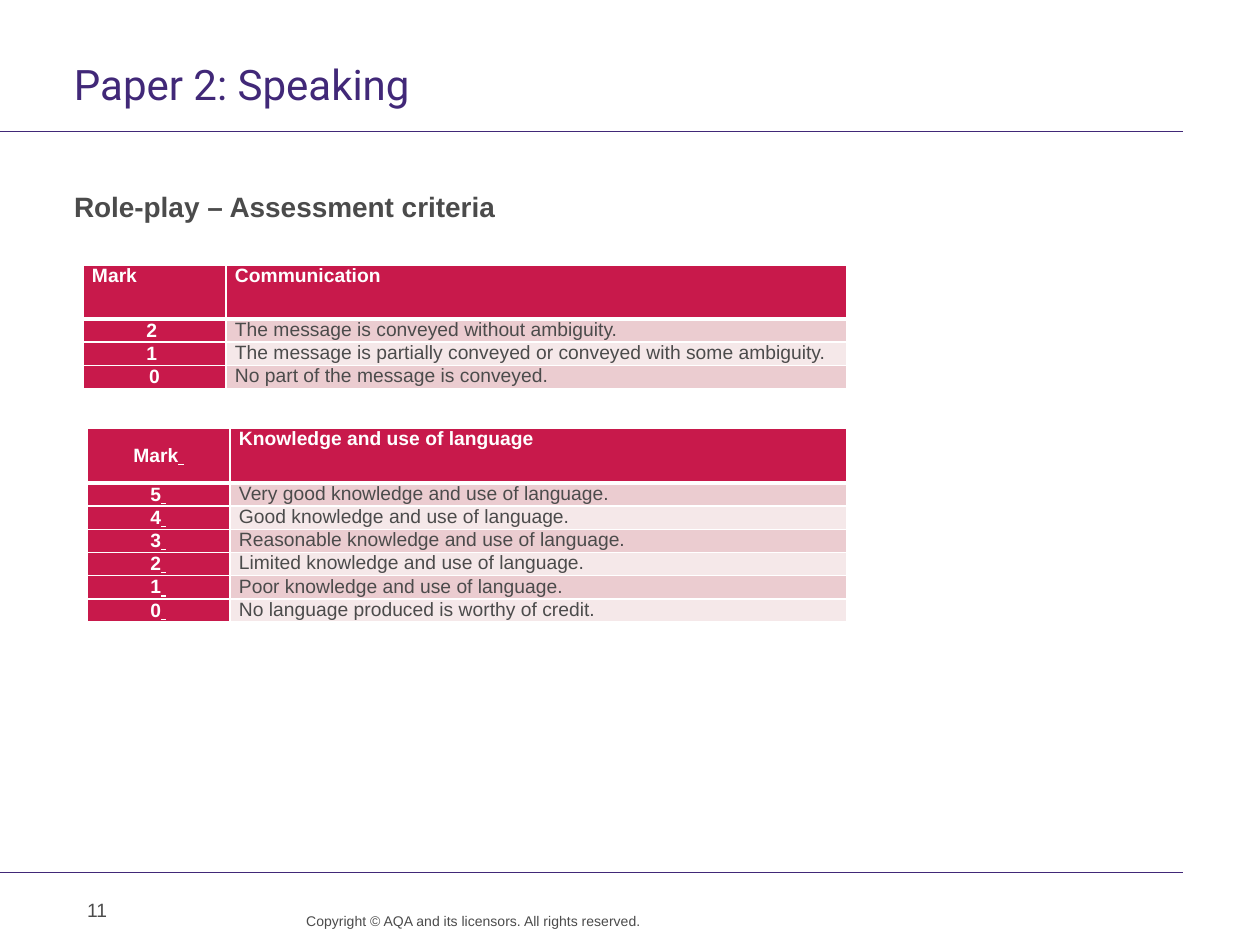
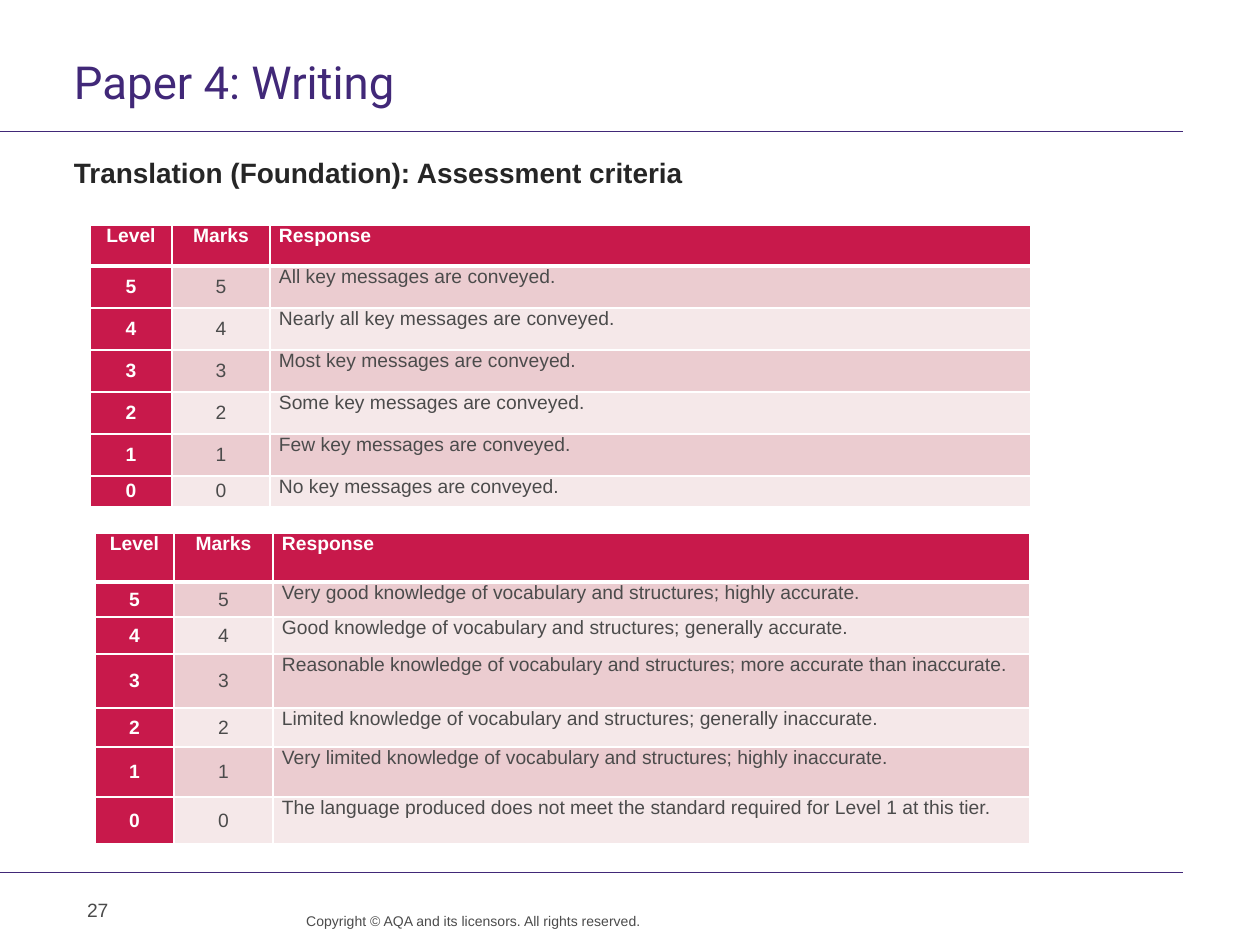
from lxml import etree
from pptx import Presentation
from pptx.dml.color import RGBColor
from pptx.enum.shapes import MSO_CONNECTOR
from pptx.enum.text import MSO_ANCHOR, PP_ALIGN
from pptx.oxml.ns import qn
from pptx.util import Pt

STRAIGHT = MSO_CONNECTOR.STRAIGHT
TOP, MIDDLE = MSO_ANCHOR.TOP, MSO_ANCHOR.MIDDLE
LEFT, CENTER, RIGHT = PP_ALIGN.LEFT, PP_ALIGN.CENTER, PP_ALIGN.RIGHT

EMU_PER_PX = 914400 / 126
COLORS = {
    "purple": "412878",
    "red": "C8194B",
    "dark_band": "EBCCD0",
    "light_band": "F5E8E9",
    "grey": "4B4B4B",
    "ink": "262626",
    "white": "FFFFFF",
}
COPYRIGHT = "Copyright © AQA and its licensors. All rights reserved."
TEXT_INSETS = (0, 0, 13, 0)
CELL_INSETS = (9, 0, 9, 0)

COMMUNICATION = [
    ("Mark", "Communication"),
    ("2 ", "The message is conveyed without ambiguity."),
    ("1 ", "The message is partially conveyed or conveyed with some ambiguity."),
    ("0", "No part of the message is conveyed."),
]
LANGUAGE = [
    ("Mark", "Knowledge and use of language"),
    ("5", "Very good knowledge and use of language."),
    ("4", "Good knowledge and use of language."),
    ("3", "Reasonable knowledge and use of language."),
    ("2", "Limited knowledge and use of language."),
    ("1", "Poor knowledge and use of language."),
    ("0", "No language produced is worthy of credit."),
]
MESSAGES = [
    "All key messages are conveyed.",
    "Nearly all key messages are conveyed.",
    "Most key messages are conveyed.",
    "Some key messages are conveyed.",
    "Few key messages are conveyed.",
    "No key messages are conveyed.",
]
ACCURACY = [
    "Very good knowledge of vocabulary and structures; highly accurate.",
    "Good knowledge of vocabulary and structures; generally accurate.",
    "Reasonable knowledge of vocabulary and structures; more accurate than inaccurate.",
    "Limited knowledge of vocabulary and structures; generally inaccurate.",
    "Very limited knowledge of vocabulary and structures; highly inaccurate.",
    "The language produced does not meet the standard required for Level 1 at this tier.",
]


def px(length):
    """Turn a length in px into EMU."""
    return round(length * EMU_PER_PX)


def rgb(name):
    """Return a named colour."""
    return RGBColor.from_string(COLORS[name])


def set_values(target, values):
    """Set every attribute in a dict of format values."""
    for name, value in values.items():
        setattr(target, name, value)


def set_insets(target, insets):
    """Set left, top, right and bottom margins of a frame or cell."""
    sides = ("margin_left", "margin_top", "margin_right", "margin_bottom")
    set_values(target, dict(zip(sides, map(px, insets))))


def add_span(para, text, size, color, font="Arial", **style):
    """Add one formatted run to a paragraph."""
    span = para.add_run()
    span.text = text
    set_values(span.font, {"name": font, "size": Pt(size), **style})
    span.font.color.rgb = rgb(color)


def add_text(page, area, text, size, color, insets=TEXT_INSETS, layout=None, **style):
    """Add a wrapped text box holding one paragraph."""
    box = page.shapes.add_textbox(*map(px, area))
    box.text_frame.word_wrap = True
    set_insets(box.text_frame, insets)
    para = box.text_frame.paragraphs[0]
    set_values(para, layout or {})
    add_span(para, text, size, color, **style)


def add_rule(page, y):
    """Add a thin horizontal rule without a shadow."""
    rule = page.shapes.add_connector(STRAIGHT, 0, px(y), px(1183), px(y))
    rule.line.color.rgb = rgb("purple")
    rule.line.width = Pt(0.6)
    etree.SubElement(rule._element.spPr, qn("a:effectLst"))


def add_page(deck, number, title, title_size):
    """Add a page with its rules, title, number and copyright line."""
    page = deck.slides.add_slide(deck.slide_layouts[6])
    for y in (132, 873):
        add_rule(page, y)
    add_text(page, (74, 892, 294, 50), str(number), 11, "grey", insets=(13, 6, 13, 6))
    add_text(page, (74, 60, 1109, 59), title, title_size, "purple",
             layout={"line_spacing": Pt(28)}, font="Roboto")
    add_text(page, (272, 912, 369, 33), COPYRIGHT, 8, "grey", insets=(0, 0, 0, 0),
             layout={"alignment": RIGHT, "line_spacing": Pt(10)})
    return page


def set_borders(cell, is_header, below_header):
    """Give a cell white borders, thicker under the header."""
    widths = {
        "lnL": 1,
        "lnR": 1,
        "lnT": 3 if below_header else 1,
        "lnB": 3 if is_header else 1,
    }
    properties = cell._tc.get_or_add_tcPr()
    for position, (tag, width) in enumerate(widths.items()):
        border = etree.Element(qn(f"a:{tag}"), w=str(Pt(width)))
        fill = etree.SubElement(border, qn("a:solidFill"))
        etree.SubElement(fill, qn("a:srgbClr"), val=COLORS["white"])
        properties.insert(position, border)


def fill_cell(cell, text, row, column, alignment, anchor, underlined_space):
    """Write and colour one cell according to its row and column."""
    is_label = row == 0 or column == 0
    band = "dark_band" if row % 2 else "light_band"
    cell.fill.solid()
    cell.fill.fore_color.rgb = rgb("red" if is_label else band)
    set_borders(cell, row == 0, row == 1)
    set_insets(cell, CELL_INSETS)
    cell.vertical_anchor = anchor
    para = cell.text_frame.paragraphs[0]
    para.alignment = alignment
    color = "white" if is_label else "grey"
    add_span(para, text, 11, color, bold=is_label)
    if underlined_space:
        add_span(para, " ", 11, color, bold=True, underline=True)


def add_criteria(page, left, top, widths, heights, rows,
                 header_alignment=CENTER, header_anchor=TOP, underlined_spaces=False):
    """Add a criteria table whose last column holds the descriptions."""
    frame = page.shapes.add_table(len(rows), len(widths), px(left), px(top),
                                  px(sum(widths)), px(sum(heights)))
    table = frame.table
    for column, width in zip(table.columns, widths):
        column.width = px(width)
    for row, height in zip(table.rows, heights):
        row.height = px(height)
    for r, values in enumerate(rows):
        for c, text in enumerate(values):
            alignment, anchor = LEFT, TOP
            if c < len(widths) - 1:
                alignment = CENTER if r else header_alignment
                anchor = MIDDLE if r else header_anchor
            fill_cell(table.cell(r, c), text, r, c, alignment, anchor,
                      underlined_spaces and c == 0)


def level_rows(responses):
    """Number the responses from level 5 down to 0 under a header."""
    levels = [(str(5 - i), str(5 - i), text) for i, text in enumerate(responses)]
    return [("Level", "Marks", "Response"), *levels]


def add_speaking(deck):
    """Build the role-play criteria page."""
    page = add_page(deck, 11, "Paper 2: Speaking", 24)
    add_text(page, (74, 190, 1038, 591), "Role-play – Assessment criteria", 16, "grey",
             layout={"space_after": Pt(6)}, bold=True)
    add_criteria(page, 83, 265, (143, 621), [54] + [21] * 3, COMMUNICATION,
                 header_alignment=LEFT)
    add_criteria(page, 87, 428, (143, 617), [55] + [21] * 6, LANGUAGE,
                 header_anchor=MIDDLE, underlined_spaces=True)


def add_writing(deck):
    """Build the translation criteria page."""
    page = add_page(deck, 27, "Paper 4: Writing", 26)
    add_text(page, (74, 156, 1109, 607), "Translation (Foundation): Assessment criteria",
             16, "ink", layout={"space_after": Pt(6)}, bold=True)
    add_criteria(page, 90, 225, (82, 98, 761), [41] + [42] * 5 + [31],
                 level_rows(MESSAGES))
    add_criteria(page, 95, 533, (79, 99, 757), [49, 35, 37, 54, 39, 50, 47],
                 level_rows(ACCURACY))


def main():
    """Build and save the deck."""
    deck = Presentation()
    deck.slide_width, deck.slide_height = px(1260), px(945)
    add_speaking(deck)
    add_writing(deck)
    deck.save("out.pptx")


if __name__ == "__main__":
    main()
